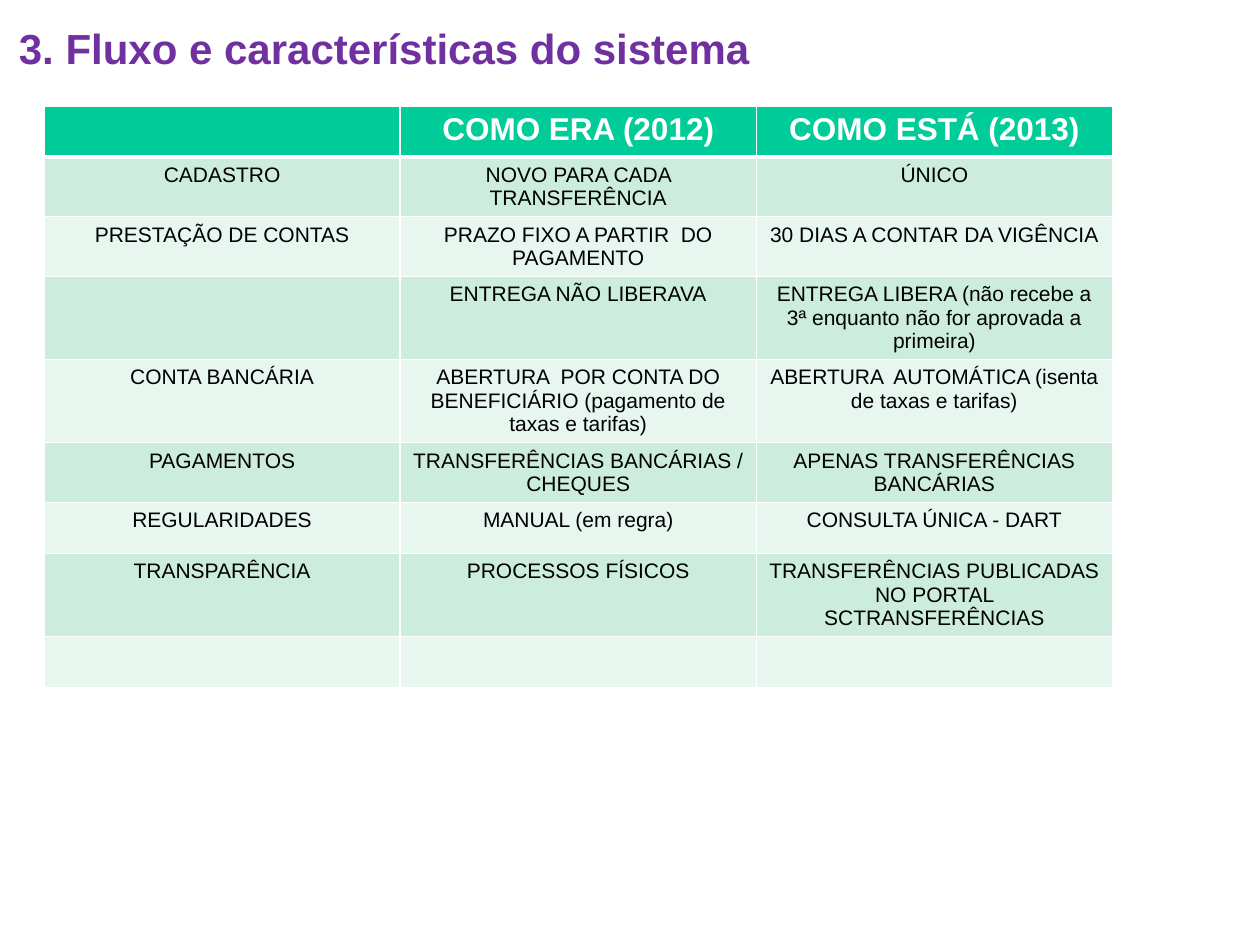
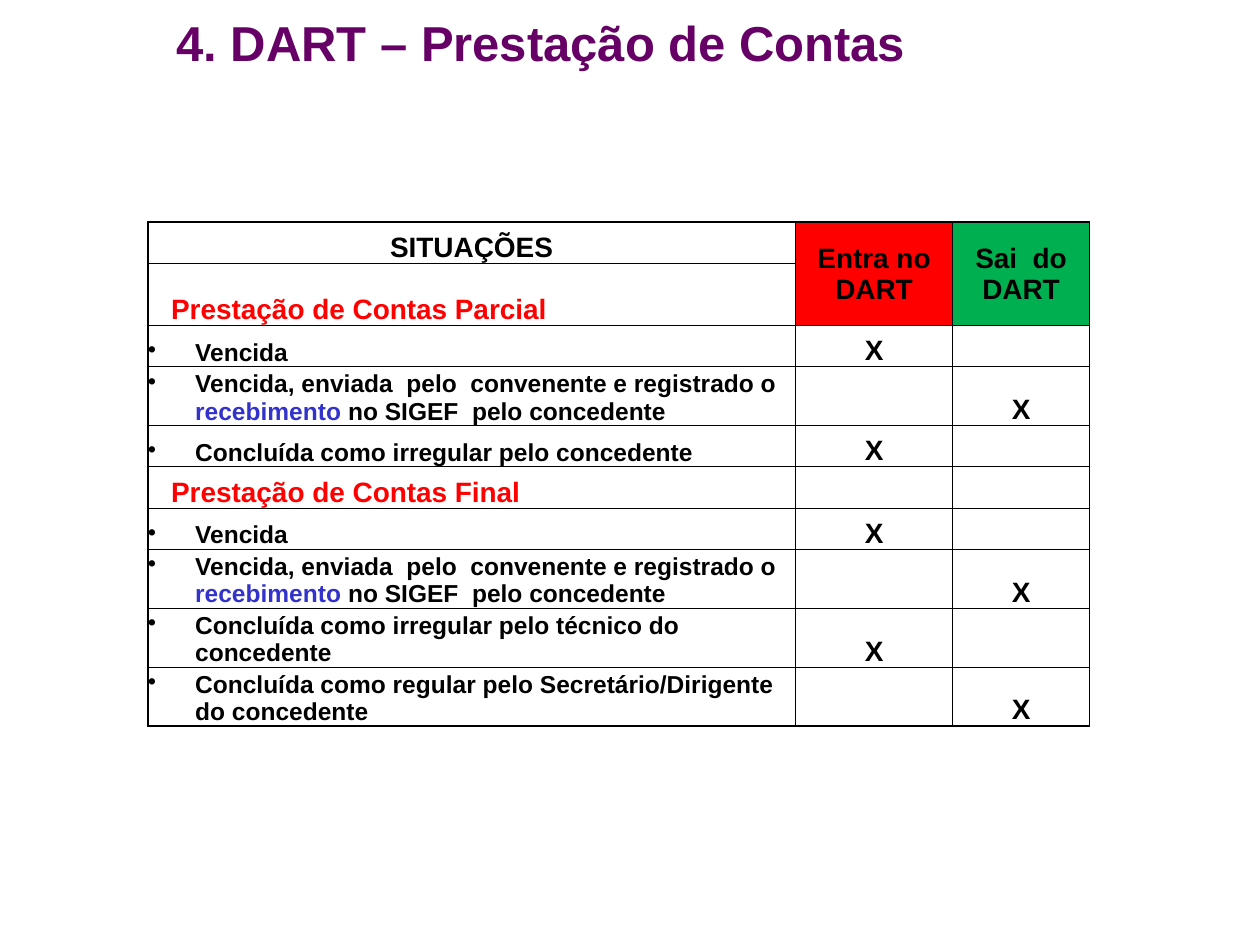
from dataclasses import dataclass

from lxml import etree
from pptx import Presentation
from pptx.dml.color import RGBColor
from pptx.enum.text import MSO_ANCHOR, MSO_AUTO_SIZE, PP_ALIGN
from pptx.oxml.ns import qn
from pptx.util import Pt

LEFT, CENTER = PP_ALIGN.LEFT, PP_ALIGN.CENTER
TOP, MIDDLE, BOTTOM = MSO_ANCHOR.TOP, MSO_ANCHOR.MIDDLE, MSO_ANCHOR.BOTTOM
FONT = "Arial"
HEX = {
    "white": "FFFFFF", "black": "000000", "violet": "7030A0", "plum": "660066",
    "teal": "00CC99", "mint": "CCECDE", "pale": "E7F6EF",
    "red": "FF0000", "green": "00B050", "blue": "3333CC",
}


@dataclass
class Title:
    text: str
    box: tuple[float, float, float, float]
    size: float
    color: str
    align: PP_ALIGN
    anchor: MSO_ANCHOR


@dataclass
class Grid:
    left: float
    top: float
    cols: list[float]
    rows: list[float]


@dataclass
class Style:
    size: float
    color: str = "black"
    bold: bool = False
    align: PP_ALIGN = CENTER
    indent: float = 0
    bullet: bool = False


HEAD = Style(18, "white", bold=True)
BODY = Style(12)
LABEL = Style(16, bold=True)
GROUP = Style(16, "red", bold=True, align=LEFT, indent=13.3)
ITEM = Style(14, bold=True, align=LEFT, indent=27, bullet=True)

CHANGES = [
    ("", "COMO ERA (2012)", "COMO ESTÁ (2013)"),
    ("CADASTRO", "NOVO PARA CADA TRANSFERÊNCIA", "ÚNICO"),
    ("PRESTAÇÃO DE CONTAS", "PRAZO FIXO A PARTIR  DO PAGAMENTO",
     "30 DIAS A CONTAR DA VIGÊNCIA"),
    ("", "ENTREGA NÃO LIBERAVA",
     "ENTREGA LIBERA (não recebe a 3ª enquanto não for aprovada a primeira)"),
    ("CONTA BANCÁRIA",
     "ABERTURA  POR CONTA DO BENEFICIÁRIO (pagamento de taxas e tarifas)",
     "ABERTURA  AUTOMÁTICA (isenta de taxas e tarifas)"),
    ("PAGAMENTOS", "TRANSFERÊNCIAS BANCÁRIAS / CHEQUES",
     "APENAS TRANSFERÊNCIAS BANCÁRIAS"),
    ("REGULARIDADES", "MANUAL (em regra)", "CONSULTA ÚNICA - DART"),
    ("TRANSPARÊNCIA", "PROCESSOS FÍSICOS",
     "TRANSFERÊNCIAS PUBLICADAS NO PORTAL SCTRANSFERÊNCIAS"),
    ("", "", ""),
]

# Text between bars is blue.
SENT = ("Vencida, enviada  pelo  convenente e registrado o |recebimento |"
        "no SIGEF  pelo concedente")
CASES = [
    (LABEL, "SITUAÇÕES", "Entra no DART", "Sai  do DART"),
    (GROUP, "Prestação de Contas Parcial", "", ""),
    (ITEM, "Vencida", "X", ""),
    (ITEM, SENT, "", "X"),
    (ITEM, "Concluída como irregular pelo concedente", "X", ""),
    (GROUP, "Prestação de Contas Final", "", ""),
    (ITEM, "Vencida", "X", ""),
    (ITEM, SENT, "", "X"),
    (ITEM, "Concluída como irregular pelo técnico do concedente", "X", ""),
    (ITEM, "Concluída como regular pelo Secretário/Dirigente do concedente",
     "", "X"),
]


def rgb(name: str) -> RGBColor:
    return RGBColor.from_string(HEX[name])


def add_slide(deck, title: Title):
    slide = deck.slides.add_slide(deck.slide_layouts[5])
    shape = slide.shapes.title
    shape.left, shape.top, shape.width, shape.height = map(Pt, title.box)
    frame = shape.text_frame
    frame.word_wrap = True
    frame.auto_size = MSO_AUTO_SIZE.NONE
    frame.vertical_anchor = title.anchor
    write(frame, title.text,
          Style(title.size, title.color, bold=True, align=title.align))
    return slide


def write(frame, text: str, style: Style) -> None:
    para = frame.paragraphs[0]
    para.alignment = style.align
    props = para._p.get_or_add_pPr()
    if style.indent:
        props.set("marL", str(Pt(style.indent)))
    if style.bullet:
        props.set("indent", str(-Pt(style.indent)))
        etree.SubElement(props, qn("a:buChar")).set("char", "•")
    font = para.font
    font.name, font.size, font.bold = FONT, Pt(style.size), style.bold
    font.color.rgb = rgb(style.color)
    for i, part in enumerate(text.split("|") if text else []):
        run = para.add_run()
        run.text = part
        if i % 2:
            run.font.color.rgb = rgb("blue")


def add_grid(slide, grid: Grid):
    table = slide.shapes.add_table(
        len(grid.rows), len(grid.cols), Pt(grid.left), Pt(grid.top),
        Pt(sum(grid.cols)), Pt(sum(grid.rows))).table
    table.first_row = table.horz_banding = False
    for col, width in zip(table.columns, grid.cols):
        col.width = Pt(width)
    for row, height in zip(table.rows, grid.rows):
        row.height = Pt(height)
    return table


def edge(cell, color: str, widths: tuple[float, float, float, float]) -> None:
    """Set the left, right, top and bottom lines, before any fill."""
    props = cell._tc.get_or_add_tcPr()
    for side, width in zip("LRTB", widths):
        line = etree.SubElement(props, qn(f"a:ln{side}"), w=str(Pt(width)))
        fill = etree.SubElement(line, qn("a:solidFill"))
        etree.SubElement(fill, qn("a:srgbClr"), val=HEX[color])


def paint(cell, color: str | None) -> None:
    if color is None:
        cell.fill.background()
    else:
        cell.fill.solid()
        cell.fill.fore_color.rgb = rgb(color)


def build_changes(deck) -> None:
    slide = add_slide(deck, Title(
        "3. Fluxo e características do sistema", (3.6, 9.4, 601, 36),
        24, "violet", LEFT, TOP))
    table = add_grid(slide, Grid(25.2, 60.5, [203.5] * 3, [29.2] * len(CHANGES)))
    for r, texts in enumerate(CHANGES):
        tone = "teal" if r == 0 else "mint" if r % 2 else "pale"
        lines = (1, 1, 3 if r == 1 else 1, 3 if r == 0 else 1)
        for c, text in enumerate(texts):
            cell = table.cell(r, c)
            edge(cell, "white", lines)
            paint(cell, tone)
            write(cell.text_frame, text, BODY if r else HEAD)


def build_cases(deck) -> None:
    slide = add_slide(deck, Title(
        "4. DART – Prestação de Contas", (18, 0, 582, 48.2),
        28, "plum", CENTER, MIDDLE))
    short, group, tall = 23.5, 35.5, 33.7
    rows = [short, group, short, tall, short, short, short, tall, tall, tall]
    table = add_grid(slide, Grid(84.5, 127, [370, 90, 78], rows))
    heads = {(0, 1): "red", (0, 2): "green"}
    last = len(CASES) - 1
    for r, (style, *texts) in enumerate(CASES):
        for c, text in enumerate(texts):
            cell = table.cell(r, c)
            cell.margin_left = cell.margin_right = 0
            cell.margin_top = cell.margin_bottom = 0
            cell.vertical_anchor = MIDDLE if (r, c) in heads else BOTTOM
            outer = (c == 0, c == 2, r == 0, r == last)
            edge(cell, "black", tuple(1 if out else 0.5 for out in outer))
            paint(cell, heads.get((r, c)))
            write(cell.text_frame, text, LABEL if c else style)
    for c in (1, 2):
        table.cell(0, c).merge(table.cell(1, c))


def main() -> None:
    deck = Presentation()
    deck.slide_width, deck.slide_height = Pt(720), Pt(540)
    build_changes(deck)
    build_cases(deck)
    deck.save("out.pptx")


if __name__ == "__main__":
    main()
